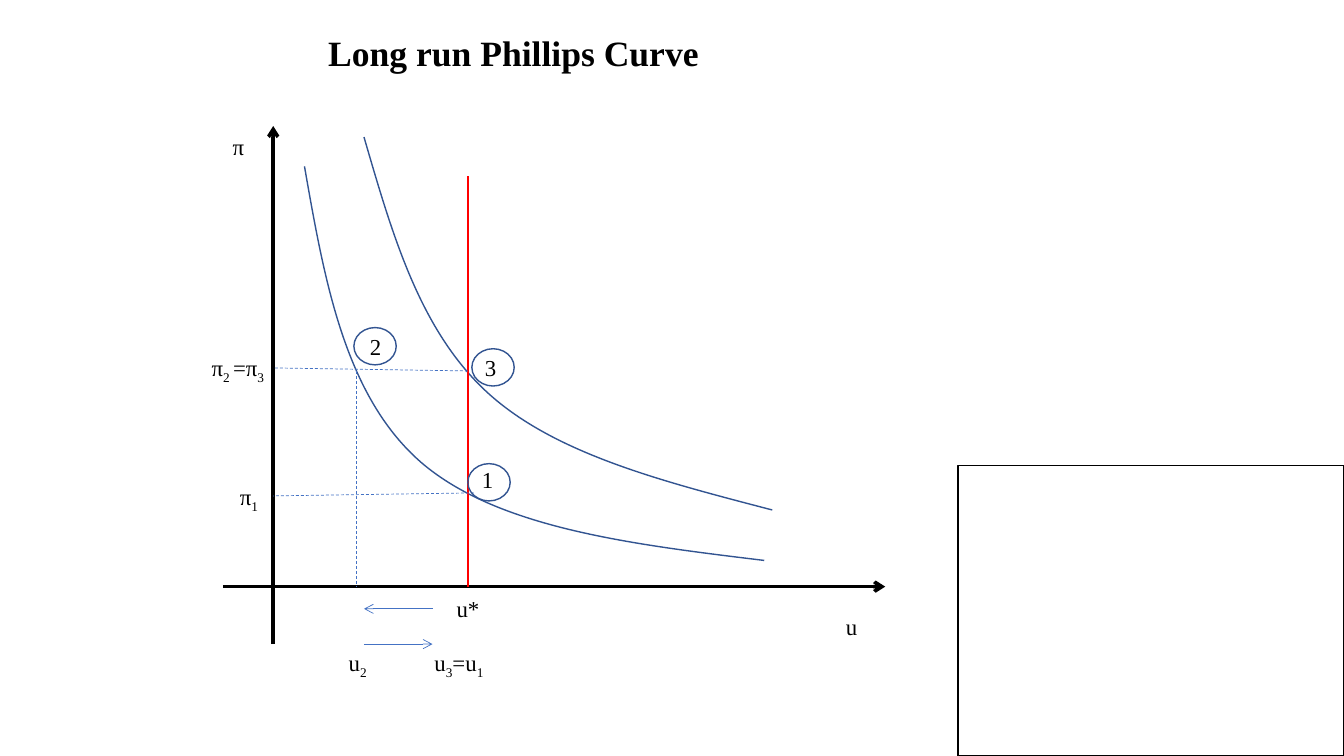
from lxml import etree
from pptx import Presentation
from pptx.dml.color import RGBColor
from pptx.enum.dml import MSO_LINE
from pptx.enum.shapes import MSO_CONNECTOR, MSO_SHAPE
from pptx.enum.text import MSO_ANCHOR, PP_ALIGN
from pptx.oxml.ns import qn
from pptx.util import Inches, Pt

STRAIGHT = MSO_CONNECTOR.STRAIGHT
DASH = MSO_LINE.DASH
OVAL, RECTANGLE = MSO_SHAPE.OVAL, MSO_SHAPE.RECTANGLE
CENTER, LEFT = PP_ALIGN.CENTER, PP_ALIGN.LEFT
MIDDLE, TOP = MSO_ANCHOR.MIDDLE, MSO_ANCHOR.TOP
BLACK = RGBColor(0x00, 0x00, 0x00)
RED = RGBColor(0xFF, 0x00, 0x00)
BLUE = RGBColor(0x44, 0x72, 0xC4)
NAVY = RGBColor(0x32, 0x54, 0x91)
FONT = "Times New Roman"
WIDTH, HEIGHT = 13.33, 7.5

prs = Presentation()
prs.slide_width, prs.slide_height = Inches(WIDTH), Inches(HEIGHT)
slide = prs.slides.add_slide(prs.slide_layouts[6])
shapes = slide.shapes


def add_label(box, runs, size=16.3, bold=False, align=LEFT, anchor=TOP, wrap=False):
    label = shapes.add_textbox(*map(Inches, box))
    frame = label.text_frame
    frame.word_wrap = wrap
    frame.vertical_anchor = anchor
    paragraph = frame.paragraphs[0]
    paragraph.alignment = align
    for position, text in enumerate(runs):
        run = paragraph.add_run()
        run.text = text
        run.font.name, run.font.size, run.font.bold = FONT, Pt(size), bold
        run.font.color.rgb = BLACK
        if position % 2:
            run._r.get_or_add_rPr().set("baseline", "-25000")


def add_line(start, end, color, weight, dash=None, arrow=False):
    line = shapes.add_connector(STRAIGHT, *map(Inches, start + end))
    line.line.color.rgb = color
    line.line.width = Pt(weight)
    if dash:
        line.line.dash_style = dash
    if arrow:
        etree.SubElement(line.line._get_or_add_ln(), qn("a:tailEnd"), type="arrow")
    etree.SubElement(line._element.spPr, qn("a:effectLst"))


add_label((0.94, 0.11, 8.31, 0.81), ["Long run Phillips Curve"],
          size=25.4, bold=True, align=CENTER, anchor=MIDDLE, wrap=True)

inflation_axis, unemployment_axis = 2.71, 5.82
natural_rate, low_rate = 4.64, 3.53
shift_left, shift_right = 3.61, 4.29
lower_row = 6.39

add_line((inflation_axis, lower_row), (inflation_axis, 1.25), BLACK, 2.5, arrow=True)
add_line((2.21, unemployment_axis), (8.78, unemployment_axis), BLACK, 2.5, arrow=True)

phillips_curves = [
    [(3.02, 1.65), (3.22, 2.79), (3.42, 3.93), (4.18, 4.59),
     (4.94, 5.24), (6.26, 5.4), (7.58, 5.56)],
    [(3.61, 1.36), (3.89, 2.32), (4.16, 3.28), (4.84, 3.9),
     (5.51, 4.51), (6.59, 4.78), (7.66, 5.06)],
]
for controls in phillips_curves:
    points = [(Inches(x), Inches(y)) for x, y in controls]
    builder = shapes.build_freeform(*points[0])
    builder.add_line_segments(points[1:], close=False)
    curve = builder.convert_to_shape()
    curve.fill.background()
    curve.line.color.rgb = NAVY
    curve.line.width = Pt(1)
    curve.shadow.inherit = False
    outline = next(curve._element.iter(qn("a:path")))
    segments = outline.findall(qn("a:lnTo"))
    for first in range(0, len(segments), 3):
        bend = etree.SubElement(outline, qn("a:cubicBezTo"))
        for segment in segments[first:first + 3]:
            bend.append(segment[0])
            outline.remove(segment)

add_line((natural_rate, unemployment_axis), (natural_rate, 1.75), RED, 1.5)
for start, end in [
    ((natural_rate, 3.68), (inflation_axis, 3.65)),
    ((low_rate, 3.68), (low_rate, unemployment_axis)),
    ((4.7, 4.89), (inflation_axis, 4.92)),
]:
    add_line(start, end, BLUE, 0.5, dash=DASH)
add_line((shift_right, 6.04), (shift_left, 6.04), BLUE, 0.5, arrow=True)
add_line((shift_left, lower_row), (shift_right, lower_row), BLUE, 0.5, arrow=True)

for left, top, width, runs in [
    (2.21, 1.27, 0.33, ["π"]),
    (8.29, 6.03, 0.32, ["u"]),
    (4.43, 5.85, 0.44, ["u*"]),
    (4.68, 4.57, 0.32, ["1"]),
    (3.57, 3.25, 0.32, ["2"]),
    (4.71, 3.46, 0.32, ["3"]),
    (2.0, 3.46, 0.76, ["π", "2 ", "=π", "3"]),
    (2.28, 4.74, 0.41, ["π", "1"]),
    (4.21, lower_row, 0.71, ["u", "3", "=u", "1"]),
    (3.36, lower_row, 0.4, ["u", "2"]),
]:
    add_label((left, top, width, 0.38), runs)

for kind, box, color in [
    (OVAL, (4.68, 3.46, 0.42, 0.37), NAVY),
    (OVAL, (4.64, 4.6, 0.42, 0.37), NAVY),
    (OVAL, (3.51, 3.25, 0.42, 0.37), NAVY),
    (RECTANGLE, (9.5, 4.62, WIDTH - 9.5, HEIGHT - 4.62), BLACK),
]:
    border = shapes.add_shape(kind, *map(Inches, box))
    border.fill.background()
    border.line.color.rgb = color
    border.line.width = Pt(1)
    border.shadow.inherit = False

prs.save("out.pptx")
